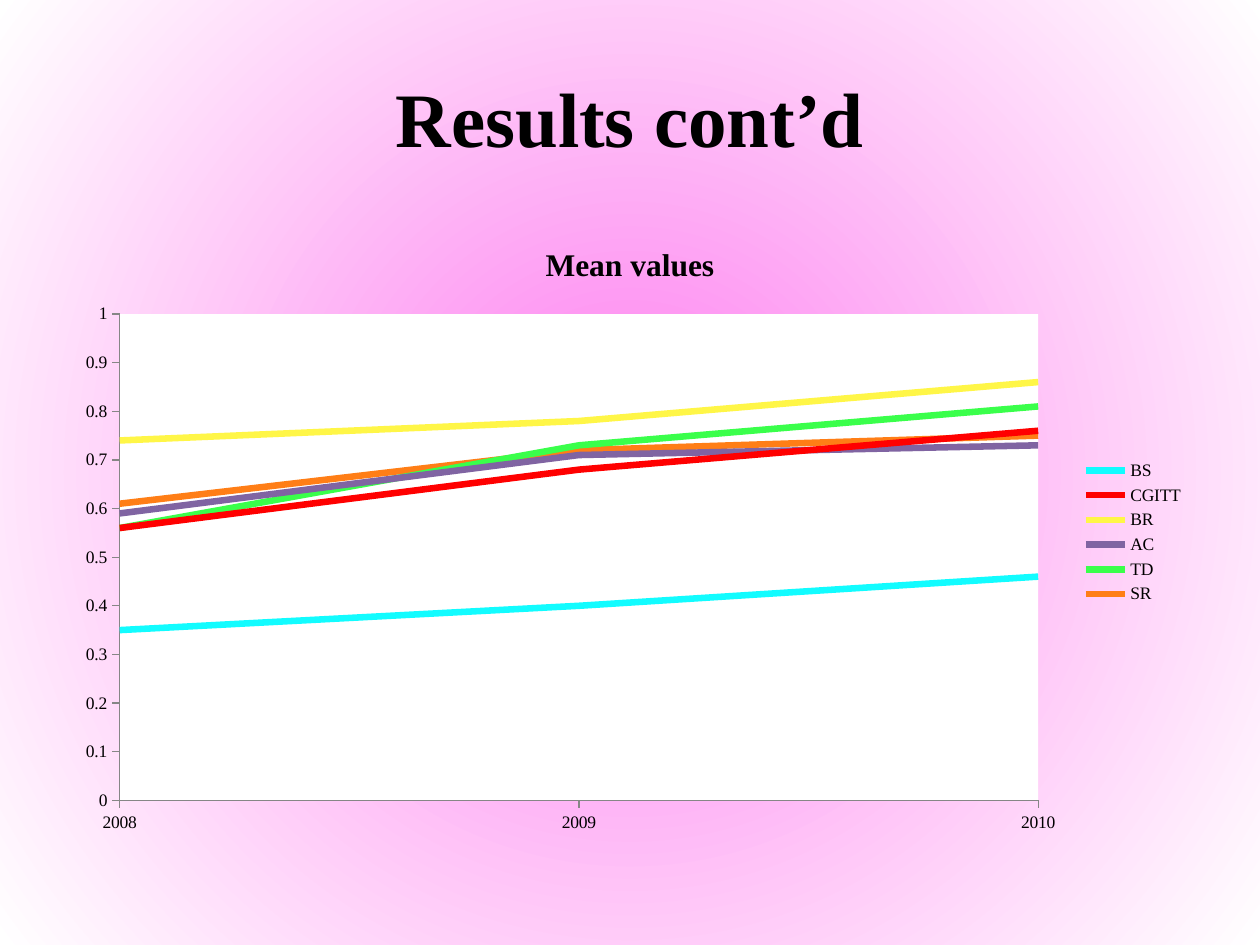
from lxml import etree
from pptx import Presentation
from pptx.chart.data import XyChartData
from pptx.dml.color import RGBColor
from pptx.enum.chart import XL_CHART_TYPE as CT, XL_LEGEND_POSITION as LP, XL_TICK_MARK as TM
from pptx.enum.text import MSO_ANCHOR, PP_ALIGN
from pptx.oxml import parse_xml
from pptx.oxml.ns import nsdecls, qn
from pptx.util import Inches, Pt

TITLE = "Results cont’d"
CHART_TITLE = "Mean values"
FONT = "Times New Roman"
YEARS = (2008, 2009, 2010)
SERIES = [
    ("BS", "12FCFF", (0.35, 0.4, 0.46)),
    ("CGITT", "FF0000", (0.56, 0.68, 0.76)),
    ("BR", "FFF647", (0.74, 0.78, 0.86)),
    ("AC", "8064A2", (0.59, 0.71, 0.73)),
    ("TD", "3AFF4B", (0.56, 0.73, 0.81)),
    ("SR", "FF7E16", (0.61, 0.72, 0.75)),
]
GLOW = ("FE80EF", "FFFFFF")
PLOT = {"x": 0.05, "y": 0.15, "w": 0.81, "h": 0.78}
W, H = 10, 7.5
MARGIN = W * 0.05


def rgb(value):
    return RGBColor.from_string(value)


def set_all(obj, values):
    for name, value in values.items():
        setattr(obj, name, value)


def set_font(font, size, bold=False):
    set_all(font, {"name": FONT, "size": Pt(size), "bold": bold})
    font.color.rgb = rgb("000000")


def box(top, height):
    return [Inches(v) for v in (MARGIN, top, W - 2 * MARGIN, height)]


def paint_background(slide):
    fill = slide.background.fill
    fill.gradient()
    for stop, color, pos in zip(fill.gradient_stops, GLOW, (0, 1)):
        stop.color.rgb = rgb(color)
        stop.position = pos
    grad = slide.background._cSld.find(".//" + qn("a:gradFill"))
    lin = grad.find(qn("a:lin"))
    grad.replace(lin, parse_xml(
        f'<a:path {nsdecls("a")} path="circle">'
        '<a:fillToRect l="50000" t="50000" r="50000" b="50000"/></a:path>'))


def add_title(slide):
    tf = slide.shapes.add_textbox(*box(0.3, 1.25)).text_frame
    set_all(tf, {"word_wrap": True, "vertical_anchor": MSO_ANCHOR.MIDDLE})
    p = tf.paragraphs[0]
    p.alignment = PP_ALIGN.CENTER
    r = p.add_run()
    r.text = TITLE
    set_font(r.font, 44, True)


def style_plot_area(chart):
    area = chart._chartSpace.chart.plotArea
    for old in area.findall(qn("c:layout")):
        area.remove(old)
    layout = etree.Element(qn("c:layout"))
    manual = etree.SubElement(layout, qn("c:manualLayout"))
    modes = {"layoutTarget": "inner", "xMode": "edge", "yMode": "edge"}
    for tag, value in {**modes, **PLOT}.items():
        etree.SubElement(manual, qn(f"c:{tag}")).set("val", str(value))
    area.insert(0, layout)
    area.append(parse_xml(
        f'<c:spPr {nsdecls("c", "a")}><a:solidFill><a:srgbClr val="FFFFFF"/></a:solidFill>'
        '<a:ln><a:noFill/></a:ln></c:spPr>'))


def add_chart(slide):
    data = XyChartData()
    for name, _, values in SERIES:
        s = data.add_series(name)
        for year, value in zip(YEARS, values):
            s.add_data_point(year, value)
    chart = slide.shapes.add_chart(CT.XY_SCATTER_SMOOTH_NO_MARKERS, *box(1.75, 4.95), data).chart
    set_font(chart.font, 10)
    chart.plots[0].vary_by_categories = False

    chart.has_title = True
    tf = chart.chart_title.text_frame
    tf.text = CHART_TITLE
    set_font(tf.paragraphs[0].runs[0].font, 18, True)
    chart.chart_title.include_in_layout = False

    chart.has_legend = True
    set_all(chart.legend, {"position": LP.RIGHT, "include_in_layout": False})

    scales = ((chart.category_axis, YEARS[0], YEARS[-1], 1), (chart.value_axis, 0, 1, 0.1))
    for axis, low, high, step in scales:
        set_all(axis, {"minimum_scale": low, "maximum_scale": high, "major_unit": step,
                       "has_major_gridlines": False, "major_tick_mark": TM.OUTSIDE,
                       "minor_tick_mark": TM.NONE})
        set_all(axis.tick_labels, {"number_format": "General", "number_format_is_linked": False})
        axis.format.line.color.rgb = rgb("868686")
        axis.format.line.width = Pt(0.75)

    for s, (_, color, _) in zip(chart.plots[0].series, SERIES):
        s.smooth = True
        s.format.line.color.rgb = rgb(color)
        s.format.line.width = Pt(3.75)
    style_plot_area(chart)


def main():
    prs = Presentation()
    set_all(prs, {"slide_width": Inches(W), "slide_height": Inches(H)})
    slide = prs.slides.add_slide(prs.slide_layouts[6])
    paint_background(slide)
    add_title(slide)
    add_chart(slide)
    prs.save("out.pptx")


if __name__ == "__main__":
    main()
